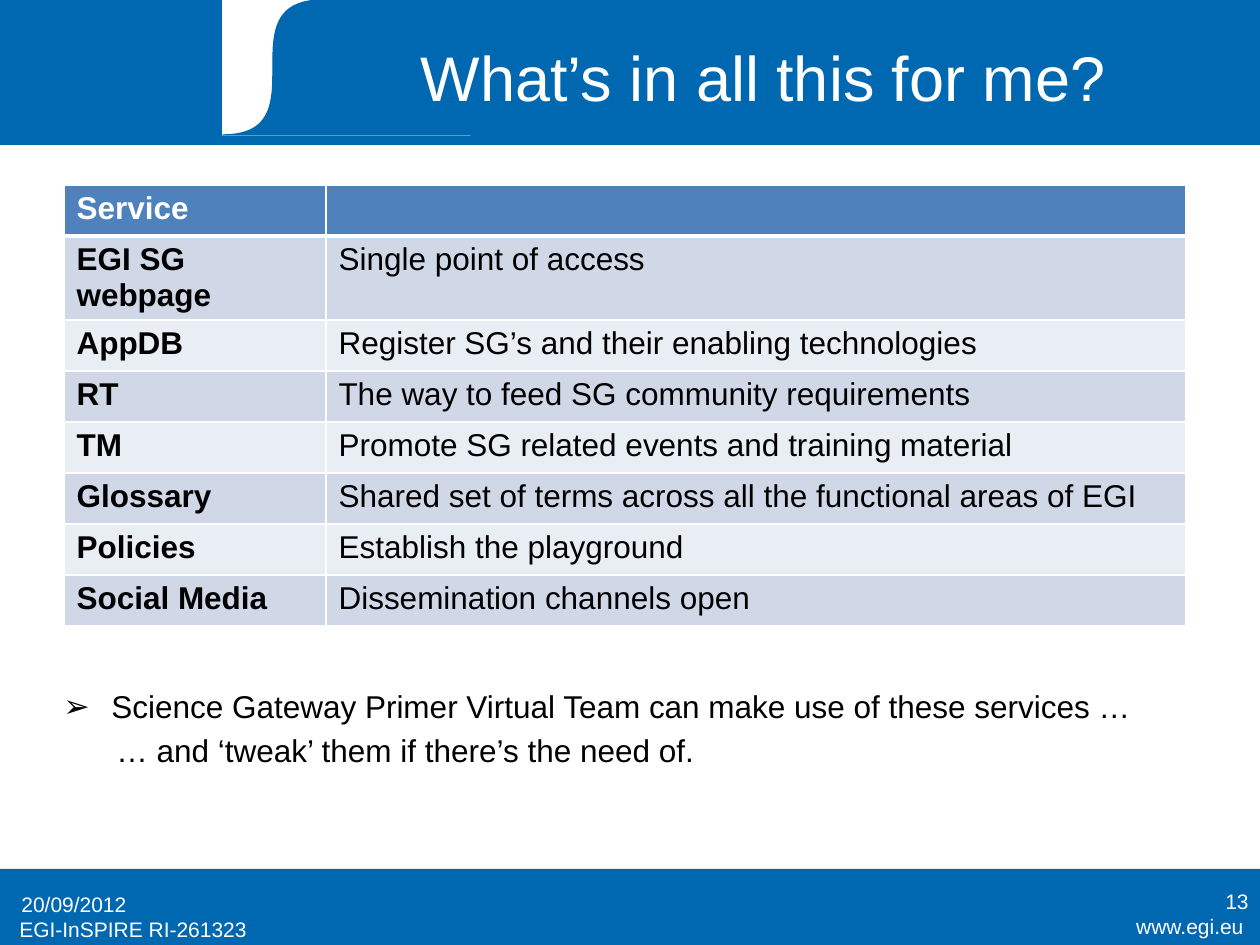
from lxml.etree import SubElement
from pptx import Presentation
from pptx.dml.color import RGBColor
from pptx.enum.shapes import MSO_SHAPE
from pptx.enum.text import MSO_ANCHOR, PP_ALIGN
from pptx.oxml.ns import qn
from pptx.util import Emu, Pt

COLORS = {"blue": "0067B1", "white": "FFFFFF", "black": "000000",
          "head": "4F81BD", "dark": "D0D8E8", "light": "E9EDF4"}
SERVICES = [
    ("Service", ""),
    ("EGI SG webpage", "Single point of access"),
    ("AppDB", "Register SG’s and their enabling technologies"),
    ("RT", "The way to feed SG community requirements"),
    ("TM", "Promote SG related events and training material"),
    ("Glossary", "Shared set of terms across all the functional areas of EGI"),
    ("Policies", "Establish the playground"),
    ("Social Media", "Dissemination channels open"),
]


def px(n):
    return Emu(round(n * 914400 / 126))


def rgb(name):
    return RGBColor.from_string(COLORS[name])


def bezier(a, b, c, d, steps=40):
    for i in range(steps + 1):
        t = i / steps
        u = 1 - t
        yield tuple(u**3 * p + 3 * u * u * t * q + 3 * u * t * t * r + t**3 * s
                    for p, q, r, s in zip(a, b, c, d))


class Deck:
    font = "Arial"

    def __init__(self, wide, high):
        self.prs = Presentation()
        self.prs.slide_width, self.prs.slide_height = px(wide), px(high)
        self.slide = self.prs.slides.add_slide(self.prs.slide_layouts[5])
        self.shapes = self.slide.shapes

    def paint(self, shape, color, line=True):
        shape.shadow.inherit = False
        shape.fill.solid()
        shape.fill.fore_color.rgb = rgb(color)
        if line:
            shape.line.color.rgb = rgb(color)
            shape.line.width = Pt(0.75)
        else:
            shape.line.fill.background()

    def rect(self, x, y, w, h, color, line=True):
        box = self.shapes.add_shape(MSO_SHAPE.RECTANGLE, px(x), px(y), px(w), px(h))
        self.paint(box, color, line)

    def outline(self, points, color):
        first, *rest = [(px(x), px(y)) for x, y in points]
        form = self.shapes.build_freeform(*first)
        form.add_line_segments(rest, close=True)
        self.paint(form.convert_to_shape(), color)

    def run(self, para, text, size, color, bold=False):
        run = para.add_run()
        run.text = text
        run.font.name, run.font.size, run.font.bold = self.font, Pt(size), bold
        run.font.color.rgb = rgb(color)

    def title(self, x, y, w, h, text):
        box = self.shapes.title
        # Bring the title in front of the header band
        box._element.getparent().append(box._element)
        box.left, box.top, box.width, box.height = px(x), px(y), px(w), px(h)
        box.text_frame.vertical_anchor = MSO_ANCHOR.MIDDLE
        para = box.text_frame.paragraphs[0]
        para.alignment = PP_ALIGN.CENTER
        self.run(para, text, 36, "white")

    def frame(self, x, y, w, h, anchor=MSO_ANCHOR.TOP):
        frame = self.shapes.add_textbox(px(x), px(y), px(w), px(h)).text_frame
        frame.word_wrap = True
        frame.vertical_anchor = anchor
        return frame

    def label(self, x, y, w, h, text, align=PP_ALIGN.LEFT, anchor=MSO_ANCHOR.TOP):
        para = self.frame(x, y, w, h, anchor).paragraphs[0]
        para.alignment = align
        self.run(para, text, 12, "white")

    def notes(self, x, y, w, h, items):
        frame = self.frame(x, y, w, h)
        for i, (text, left, hang, mark) in enumerate(items):
            para = frame.add_paragraph() if i else frame.paragraphs[0]
            props = para._p.get_or_add_pPr()
            props.set("marL", str(px(left)))
            props.set("indent", str(px(-hang)))
            if mark:
                SubElement(props, qn("a:buFont"), typeface=self.font)
                SubElement(props, qn("a:buChar"), char=mark)
            para.alignment = PP_ALIGN.JUSTIFY
            if i:
                para.space_before = Pt(3.6)
            self.run(para, text, 18, "black")

    def border(self, cell, side, width):
        line = SubElement(cell._tc.get_or_add_tcPr(), qn(f"a:ln{side}"), w=str(Pt(width)))
        fill = SubElement(line, qn("a:solidFill"))
        SubElement(fill, qn("a:srgbClr"), val=COLORS["white"])

    def table(self, x, y, widths, high, rows):
        grid = self.shapes.add_table(len(rows), len(widths), px(x), px(y),
                                     px(sum(widths)), px(high * len(rows))).table
        for col, wide in zip(grid.columns, widths):
            col.width = px(wide)
        for r, row in enumerate(rows):
            grid.rows[r].height = px(high)
            fill = "head" if r == 0 else "dark" if r % 2 else "light"
            for c, text in enumerate(row):
                cell = grid.cell(r, c)
                cell.margin_bottom = px(2)
                for side in "LRTB":
                    thick = (r, side) in ((0, "B"), (1, "T"))
                    self.border(cell, side, 3 if thick else 1)
                cell.fill.solid()
                cell.fill.fore_color.rgb = rgb(fill)
                if text:
                    self.run(cell.text_frame.paragraphs[0], text, 18,
                             "black" if r else "white", bold=c == 0)


def main():
    deck = Deck(1260, 945)

    # Footer and header bands
    deck.rect(0, 869, 1260, 76, "blue", line=False)
    deck.rect(0, 0, 1260, 144, "blue")

    # White swoosh: a blue curve over a white block
    left, right, low, bend = 223, 471, 135, 323
    deck.rect(left, 0, right - left - 1, low, "white")
    curve = bezier((left, low), (bend, low), (left, 0), (bend, 0))
    deck.outline([(right, 0), (right, low), *curve], "blue")

    deck.title(292, 16, 943, 120, "What’s in all this for me?")

    # Footer labels
    deck.label(1057, 907, 199, 39, "www.egi.eu", PP_ALIGN.RIGHT)
    deck.label(7, 910, 315, 39, "EGI-InSPIRE RI-261323")
    deck.label(9, 879, 294, 50, "20/09/2012", anchor=MSO_ANCHOR.MIDDLE)
    deck.label(967, 876, 294, 50, "13", PP_ALIGN.RIGHT, MSO_ANCHOR.MIDDLE)

    # Services and closing remark
    deck.table(64, 185, [262, 860], 51, SERVICES)
    deck.notes(43, 681, 1182, 208, [
        ("Science Gateway Primer Virtual Team can make use of these services …",
         56, 48, "➢"),
        ("… and ‘tweak’ them if there’s the need of.", 61, 0, None),
    ])

    deck.prs.save("out.pptx")


if __name__ == "__main__":
    main()
